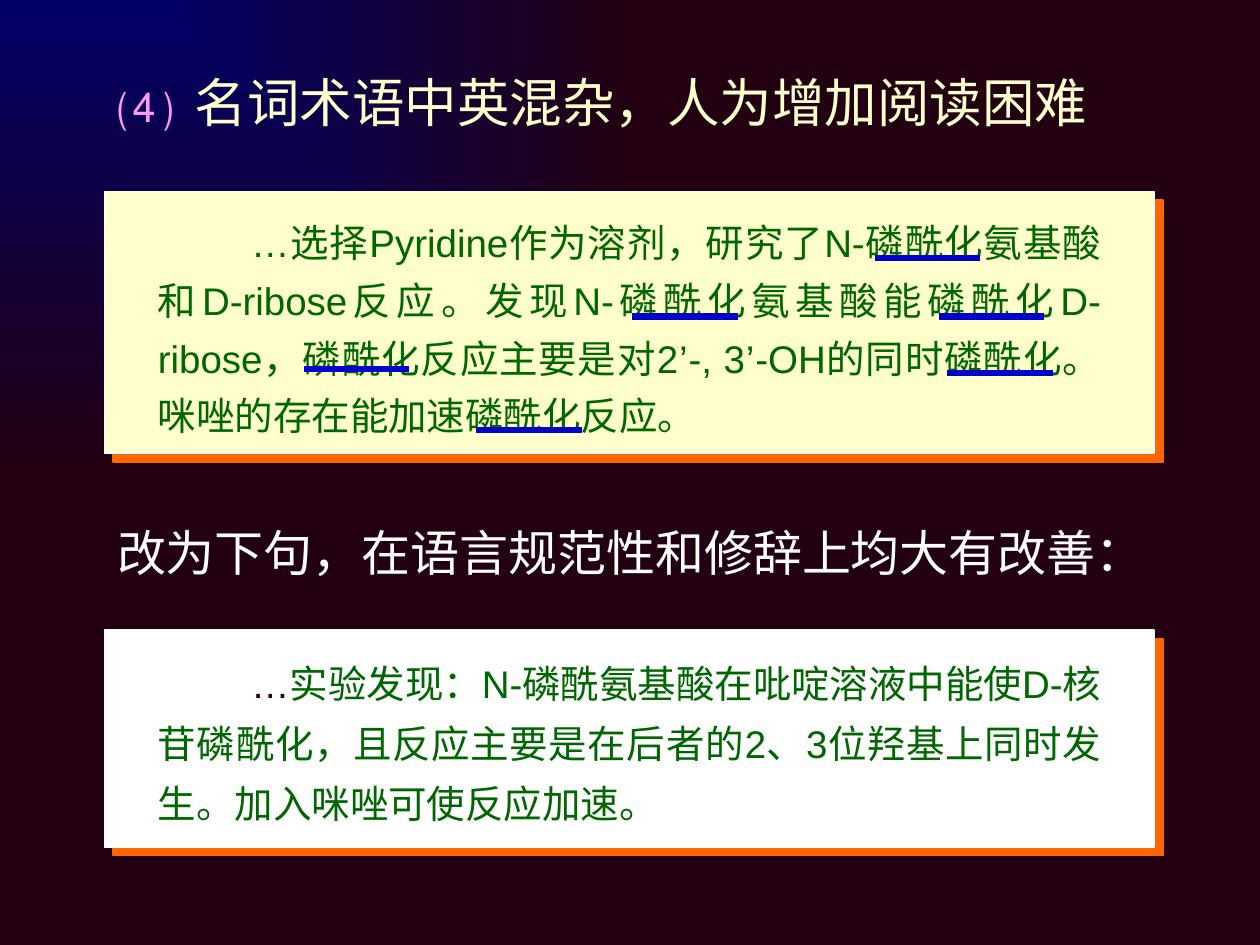
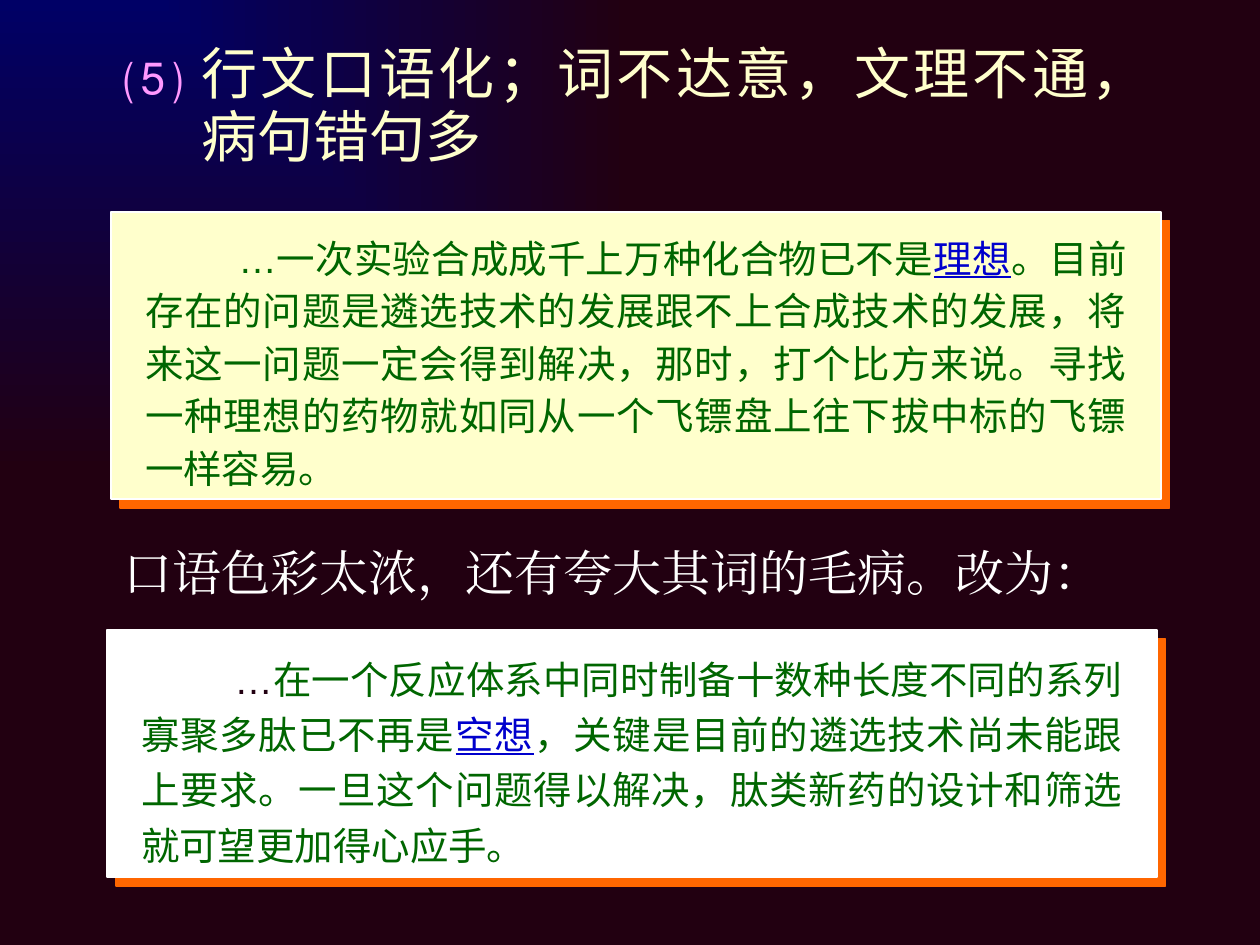
from lxml.etree import SubElement
from pptx import Presentation
from pptx.dml.color import RGBColor
from pptx.enum.lang import MSO_LANGUAGE_ID as Language
from pptx.enum.shapes import MSO_CONNECTOR as Connector, MSO_SHAPE as Shape
from pptx.enum.text import MSO_ANCHOR as Anchor, MSO_AUTO_SIZE as AutoSize, PP_ALIGN as Align
from pptx.oxml import parse_xml
from pptx.oxml.ns import nsdecls, qn
from pptx.util import Cm, Pt

NAVY, MAROON, CREAM, WHITE = "000066", "220011", "FFFFCC", "FFFFFF"
GREEN, BLUE, ORANGE, PINK = "006600", "0000CC", "FF6600", "FF99FF"
CARD_WIDTH = 21.16
FIRST_LINE = 1.88
TITLE_HANG = 1.57
MARK_LENGTH = 2.13


def rgb(value):
    """Turn a hex string into a colour."""
    return RGBColor.from_string(value)


def paint_background(master):
    """Give every slide the gradient that spreads from the top left corner."""
    fill = master.background.fill
    fill.gradient()
    for stop, color in zip(fill.gradient_stops, (NAVY, MAROON)):
        stop.color.rgb = rgb(color)
    gradient = master.background._cSld.find(".//" + qn("a:gradFill"))
    gradient.replace(gradient.find(qn("a:lin")), parse_xml(
        f'<a:path {nsdecls("a")} path="rect"><a:fillToRect r="100000" b="100000"/></a:path>'))


def write_text(shape, runs, size, font="Arial", color=GREEN, spacing=1.0,
               align=Align.JUSTIFY, left=0, indent=0, top_margin=0.13):
    """Fill a shape with one paragraph of (text, overrides) runs."""
    frame = shape.text_frame
    frame.word_wrap = True
    frame.auto_size = AutoSize.NONE
    frame.vertical_anchor = Anchor.TOP
    frame.margin_left = frame.margin_right = Cm(0.25)
    frame.margin_top = frame.margin_bottom = Cm(top_margin)
    paragraph = frame.paragraphs[0]
    paragraph.alignment = align
    paragraph.line_spacing = spacing
    properties = paragraph._p.get_or_add_pPr()
    properties.set("marL", str(Cm(left)))
    properties.set("indent", str(Cm(indent)))
    for text, overrides in runs:
        run = paragraph.add_run()
        run.text = text
        run.font.size = Pt(size)
        run.font.name = font
        run.font.language_id = Language.SIMPLIFIED_CHINESE
        run.font.color.rgb = rgb(overrides.get("color", color))
        if overrides.get("underline"):
            run.font.underline = True
        SubElement(run._r.rPr, qn("a:ea"), typeface=font)
    return paragraph


def place(shape, box):
    """Move a shape to a box of left, top, width and height."""
    shape.left, shape.top, shape.width, shape.height = map(Cm, box)


def add_title(slide, box, number, text, **style):
    """Format the title with its pink number as a hanging bullet."""
    place(slide.shapes.title, box)
    paragraph = write_text(slide.shapes.title, [(text, {})], color=CREAM,
                           left=TITLE_HANG, indent=-TITLE_HANG, **style)
    properties = paragraph._p.pPr
    SubElement(SubElement(properties, qn("a:buClr")), qn("a:srgbClr"), val=PINK)
    SubElement(properties, qn("a:buSzPct"), val="105000")
    SubElement(properties, qn("a:buFont"), typeface="Arial")
    SubElement(properties, qn("a:buChar"), char=number)


def add_card(slide, left, top, height, fill, text_width, runs, spacing):
    """Draw a panel with a hard orange shadow and a centred quotation."""
    card = slide.shapes.add_shape(Shape.RECTANGLE, *map(Cm, (left, top, CARD_WIDTH, height)))
    card.fill.solid()
    card.fill.fore_color.rgb = rgb(fill)
    card.line.color.rgb = rgb(WHITE)
    card.line.width = Pt(1)
    card.shadow.inherit = False
    shadow = SubElement(card._element.spPr.find(qn("a:effectLst")), qn("a:outerShdw"),
                        dist=str(Pt(7.1)), dir="2700000", algn="ctr", rotWithShape="0")
    SubElement(shadow, qn("a:srgbClr"), val=ORANGE)
    box = (left + (CARD_WIDTH - text_width) / 2, top + 0.2, text_width, height - 0.5)
    quotation = slide.shapes.add_textbox(*map(Cm, box))
    write_text(quotation, runs, 22, spacing=spacing, indent=FIRST_LINE)


def add_caption(slide, box, text, **style):
    """Add the white sentence between the two cards."""
    write_text(slide.shapes.add_textbox(*map(Cm, box)), [(text, {})], 28, color=WHITE, **style)


def add_marks(slide, left, top, offsets):
    """Underline the terms at offsets from the corner of a card."""
    for across, down in offsets:
        x, y = left + across, top + down
        mark = slide.shapes.add_connector(
            Connector.STRAIGHT, *map(Cm, (x, y, x + MARK_LENGTH, y)))
        mark.line.color.rgb = rgb(BLUE)
        mark.line.width = Pt(3.5)
        SubElement(mark._element.spPr, qn("a:effectLst"))


def build_mixed_terms(slide):
    """Build the slide on mixing Chinese and English terms."""
    left, top = 2.11, 3.86
    add_title(slide, (left, 1.52, 21.51, 1.75), "⑷", "名词术语中英混杂，人为增加阅读困难",
              size=30, font="Noto Sans CJK JP", spacing=0.94, top_margin=0)
    add_card(slide, left, top, 5.28, CREAM, 19.51, [
        ("…选择Pyridine作为溶剂，研究了N-磷酰化氨基酸和D-ribose反应。发现N-磷酰化氨基酸能"
         "磷酰化D-ribose，磷酰化反应主要是对2’-, 3’-OH的同时磷酰化。"
         "咪唑的存在能加速磷酰化反应。", {})], 1.25)
    add_card(slide, left, 12.7, 4.37, WHITE, 19.51, [
        ("…", {"color": MAROON}),
        ("实验发现：N-磷酰氨基酸在吡啶溶液中能使D-核苷磷酰化，且反应主要是在后者的2、3位"
         "羟基上同时发生。加入咪唑可使反应加速。", {})], 1.3)
    add_caption(slide, (left, 10.29, 21.46, 1.85), "改为下句，在语言规范性和修辞上均大有改善：",
                spacing=1.1, left=1.07, indent=-1.07)
    add_marks(slide, left, top, [(15.52, 1.35), (16.81, 2.52), (16.99, 3.66),
                                 (10.64, 2.52), (4.01, 3.58), (7.49, 4.8)])


def build_colloquial_style(slide):
    """Build the slide on colloquial and faulty sentences."""
    left = 2.24
    add_title(slide, (left, 0.76, CARD_WIDTH, 3.45), "⑸",
              "行文口语化；词不达意，文理不通，病句错句多",
              size=32, font="Noto Sans CJK SC", spacing=0.94)
    add_card(slide, left, 4.27, 5.79, CREAM, 20.29, [
        ("…一次实验合成成千上万种化合物已不是", {}),
        ("理想", {"color": BLUE, "underline": True}),
        ("。目前存在的问题是遴选技术的发展跟不上合成技术的发展，将来这一问题一定会得到解决，"
         "那时，打个比方来说。寻找一种理想的药物就如同从一个飞镖盘上往下拔中标的飞镖一样容易。",
         {})], 1.14)
    add_card(slide, 2.16, 12.7, 4.98, WHITE, 20.29, [
        ("…", {"color": MAROON}),
        ("在一个反应体系中同时制备十数种长度不同的系列寡聚多肽已不再是", {}),
        ("空想", {"color": BLUE, "underline": True}),
        ("，关键是目前的遴选技术尚未能跟上要求。一旦这个问题得以解决，"
         "肽类新药的设计和筛选就可望更加得心应手。", {})], 1.2)
    add_caption(slide, (left, 10.8, 21.79, 1.45), "口语色彩太浓，还有夸大其词的毛病。改为：",
                font="Times New Roman", align=Align.LEFT)


def main():
    """Build and save the presentation."""
    presentation = Presentation()
    presentation.slide_width, presentation.slide_height = Cm(25.4), Cm(19.05)
    paint_background(presentation.slide_master)
    for build in (build_mixed_terms, build_colloquial_style):
        build(presentation.slides.add_slide(presentation.slide_layouts[5]))
    presentation.save("out.pptx")


if __name__ == "__main__":
    main()
